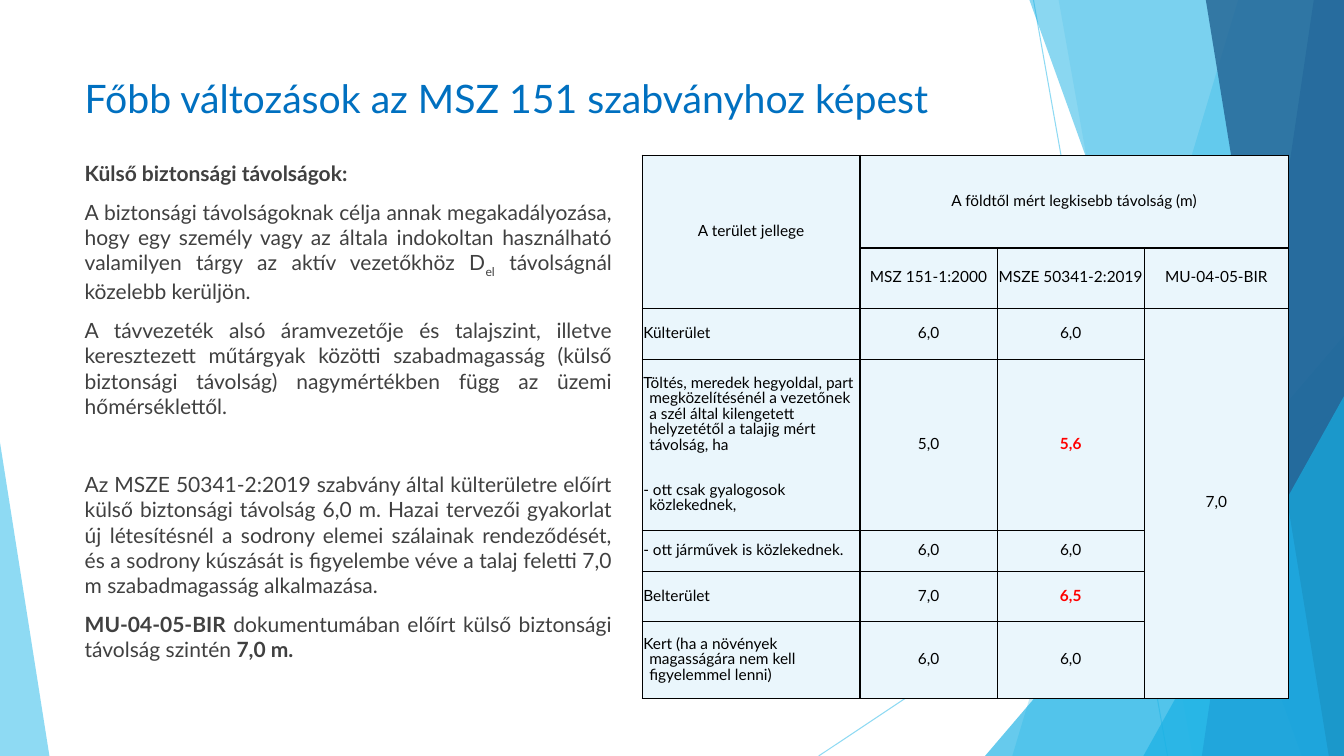
from dataclasses import dataclass

from lxml.etree import SubElement
from pptx import Presentation
from pptx.dml.color import RGBColor
from pptx.enum.shapes import MSO_CONNECTOR, MSO_SHAPE
from pptx.enum.text import MSO_ANCHOR, MSO_AUTO_SIZE, PP_ALIGN
from pptx.oxml.ns import qn
from pptx.util import Inches, Pt


@dataclass(frozen=True)
class Theme:
    font: str = "Lato"
    title: str = "0070C0"
    body: str = "404040"
    ink: str = "000000"
    alert: str = "FF0000"
    cell: str = "EAF6FC"
    sky: str = "5FCBEF"
    cyan: str = "17B0E4"
    blue: str = "2E83C3"
    navy: str = "226292"
    title_size: float = 28
    body_size: float = 15
    table_size: float = 11
    table_leading: float = 11.1


THEME = Theme()
WIDTH, HEIGHT = 13.33, 7.5
BOLD = {"bold": True}

# Each paragraph: space before in points, then (text, format) runs
BODY = [
    (10, [("Külső biztonsági távolságok:", BOLD)]),
    (10, [("A biztonsági távolságoknak célja annak megakadályozása, hogy egy személy vagy az "
           "általa indokoltan használható valamilyen tárgy az aktív vezetőkhöz D", {}),
          ("el", {"baseline": -25}),
          (" távolságnál közelebb kerüljön.", {})]),
    (10, [("A távvezeték alsó áramvezetője és talajszint, illetve keresztezett műtárgyak közötti "
           "szabadmagasság (külső biztonsági távolság) nagymértékben függ az üzemi "
           "hőmérséklettől.", {})]),
    (38, [("Az MSZE 50341-2:2019 szabvány által külterületre előírt külső biztonsági távolság "
           "6,0 m. Hazai tervezői gyakorlat új létesítésnél a sodrony elemei szálainak "
           "rendeződését, és a sodrony kúszását is figyelembe véve a talaj feletti 7,0 m "
           "szabadmagasság alkalmazása.", {})]),
    (10, [("MU-04-05-BIR", BOLD),
          (" dokumentumában előírt külső biztonsági távolság szintén ", {}),
          ("7,0 m.", BOLD)]),
]

COLUMN_WIDTHS = [2.16, 1.36, 1.46, 1.43]
ROW_HEIGHTS = [0.92, 0.6, 0.51, 1.69, 0.41, 0.5, 0.76]
HEADER_ROWS = 2
MERGES = [((0, 0), (1, 0)), ((0, 1), (0, 3)), ((2, 3), (6, 3))]
ALERT_VALUES = {"5,6", "6,5"}
DISTANCES = [
    ["A terület jellege", "A földtől mért legkisebb távolság (m)", "", ""],
    ["", "MSZ 151-1:2000", "MSZE 50341-2:2019", "MU-04-05-BIR"],
    ["Külterület", "6,0", "6,0", "7,0"],
    ["Töltés, meredek hegyoldal, part megközelítésénél a vezetőnek a szél által kilengetett "
     "helyzetétől a talajig mért távolság, ha\n- ott csak gyalogosok közlekednek,",
     "5,0", "5,6", ""],
    ["- ott járművek is közlekednek.", "6,0", "6,0", ""],
    ["Belterület", "7,0", "6,5", ""],
    ["Kert (ha a növények magasságára nem kell figyelemmel lenni)", "6,0", "6,0", ""],
]


def rgb(color):
    return RGBColor.from_string(color)


def add_text(paragraph, text, size, color, bold=False, baseline=0):
    run = paragraph.add_run()
    run.text = text
    font = run.font
    font.name, font.size, font.bold = THEME.font, Pt(size), bold
    font.color.rgb = rgb(color)
    if baseline:
        run._r.get_or_add_rPr().set("baseline", str(baseline * 1000))


def format_paragraph(paragraph, align, before=0, margin=0, indent=0):
    paragraph.alignment = align
    paragraph.space_before = Pt(before)
    properties = paragraph._p.get_or_add_pPr()
    properties.set("marL", str(Inches(margin)))
    properties.set("indent", str(Inches(indent)))


def set_opacity(shape, percent):
    for color in shape.element.iter(qn("a:srgbClr")):
        SubElement(color, qn("a:alpha"), val=str(percent * 1000))


def paint(shape, color, opacity):
    shape.shadow.inherit = False
    shape.fill.solid()
    shape.fill.fore_color.rgb = rgb(color)
    shape.line.fill.background()
    set_opacity(shape, opacity)


def add_thin_line(slide, start, end):
    points = [Inches(value) for value in (*start, *end)]
    line = slide.shapes.add_connector(MSO_CONNECTOR.STRAIGHT, *points)
    line.line.width = Pt(0.75)
    line.line.color.rgb = rgb(THEME.sky)
    set_opacity(line, 70)
    SubElement(line.element.spPr, qn("a:effectLst"))


def add_band(slide, top_x, bottom_x, color, opacity):
    """Fill from a slanted left edge to the right edge of the slide."""
    corners = [(WIDTH, 0), (WIDTH, HEIGHT), (bottom_x, HEIGHT)]
    builder = slide.shapes.build_freeform(Inches(top_x), 0)
    builder.add_line_segments([(Inches(x), Inches(y)) for x, y in corners])
    paint(builder.convert_to_shape(), color, opacity)


def add_corner_triangle(slide, left, width, height, color, opacity, apex):
    """Stand a right triangle on the bottom edge; apex 0 is left, 1 is right."""
    shape = slide.shapes.add_shape(
        MSO_SHAPE.ISOSCELES_TRIANGLE, Inches(left), Inches(HEIGHT - height),
        Inches(width), Inches(height))
    shape.adjustments[0] = apex
    paint(shape, color, opacity)


def add_backdrop(slide):
    add_thin_line(slide, (10.25, 0), (11.58, HEIGHT))
    add_thin_line(slide, (WIDTH, 4.03), (8.12, HEIGHT))
    add_band(slide, 12.28, 10.04, THEME.sky, 36)
    add_band(slide, 10.5, 11.83, THEME.sky, 20)
    add_corner_triangle(slide, 9.77, 3.56, 4.17, THEME.cyan, 66, apex=1)
    add_band(slide, 10.21, 12.91, THEME.cyan, 50)
    add_band(slide, 13.03, 11.92, THEME.blue, 70)
    add_band(slide, 11.96, 13.18, THEME.navy, 80)
    add_corner_triangle(slide, 11.34, 1.99, 3.57, THEME.cyan, 66, apex=1)
    add_corner_triangle(slide, 0, 0.49, 3.11, THEME.sky, 70, apex=0)


def place(placeholder, left, top, width, height, anchor):
    """Position a placeholder in front of everything drawn so far."""
    placeholder.left, placeholder.top = Inches(left), Inches(top)
    placeholder.width, placeholder.height = Inches(width), Inches(height)
    frame = placeholder.text_frame
    frame.word_wrap, frame.auto_size = True, MSO_AUTO_SIZE.NONE
    frame.vertical_anchor = anchor
    placeholder.element.getparent().append(placeholder.element)
    return frame


def fill_title(slide, text):
    frame = place(slide.shapes.title, 0.74, 0.67, 9.4, 0.6, MSO_ANCHOR.MIDDLE)
    format_paragraph(frame.paragraphs[0], PP_ALIGN.LEFT)
    add_text(frame.paragraphs[0], text, THEME.title_size, THEME.title)


def fill_body(slide):
    frame = place(slide.placeholders[1], 0.74, 1.54, 5.43, 5.2, MSO_ANCHOR.TOP)
    for index, (before, runs) in enumerate(BODY):
        paragraph = frame.add_paragraph() if index else frame.paragraphs[0]
        format_paragraph(paragraph, PP_ALIGN.JUSTIFY, before)
        SubElement(paragraph._p.pPr, qn("a:buNone"))
        for text, style in runs:
            add_text(paragraph, text, THEME.body_size, THEME.body, **style)


def style_cell(cell):
    properties = cell._tc.get_or_add_tcPr()
    for side in ("lnL", "lnR", "lnT", "lnB"):
        border = SubElement(properties, qn(f"a:{side}"), w=str(Pt(1)))
        SubElement(SubElement(border, qn("a:solidFill")), qn("a:srgbClr"), val=THEME.ink)
    cell.fill.solid()
    cell.fill.fore_color.rgb = rgb(THEME.cell)
    cell.vertical_anchor = MSO_ANCHOR.MIDDLE
    cell.margin_left = cell.margin_right = Inches(0.01)
    cell.margin_top = cell.margin_bottom = 0


def fill_cell(cell, text, is_label):
    align, margin = (PP_ALIGN.LEFT, 0.06) if is_label else (PP_ALIGN.CENTER, 0)
    alert = text in ALERT_VALUES
    for index, line in enumerate(text.split("\n")):
        frame = cell.text_frame
        paragraph = frame.add_paragraph() if index else frame.paragraphs[0]
        format_paragraph(paragraph, align, before=21, margin=margin, indent=-0.61)
        paragraph.line_spacing = Pt(THEME.table_leading)
        add_text(paragraph, line, THEME.table_size, THEME.alert if alert else THEME.ink, alert)


def add_distance_table(slide):
    table = slide.shapes.add_table(
        len(ROW_HEIGHTS), len(COLUMN_WIDTHS), Inches(6.37), Inches(1.54),
        Inches(sum(COLUMN_WIDTHS)), Inches(sum(ROW_HEIGHTS))).table
    table.first_row = table.horz_banding = False
    for column, width in zip(table.columns, COLUMN_WIDTHS):
        column.width = Inches(width)
    for row, height in zip(table.rows, ROW_HEIGHTS):
        row.height = Inches(height)
    for first, last in MERGES:
        table.cell(*first).merge(table.cell(*last))
    for row, texts in enumerate(DISTANCES):
        for column, text in enumerate(texts):
            cell = table.cell(row, column)
            style_cell(cell)
            if text:
                fill_cell(cell, text, is_label=column == 0 and row >= HEADER_ROWS)


def main():
    presentation = Presentation()
    presentation.slide_width, presentation.slide_height = Inches(WIDTH), Inches(HEIGHT)
    slide = presentation.slides.add_slide(presentation.slide_layouts[1])
    add_backdrop(slide)
    fill_title(slide, "Főbb változások az MSZ 151 szabványhoz képest")
    fill_body(slide)
    add_distance_table(slide)
    presentation.save("out.pptx")


if __name__ == "__main__":
    main()
